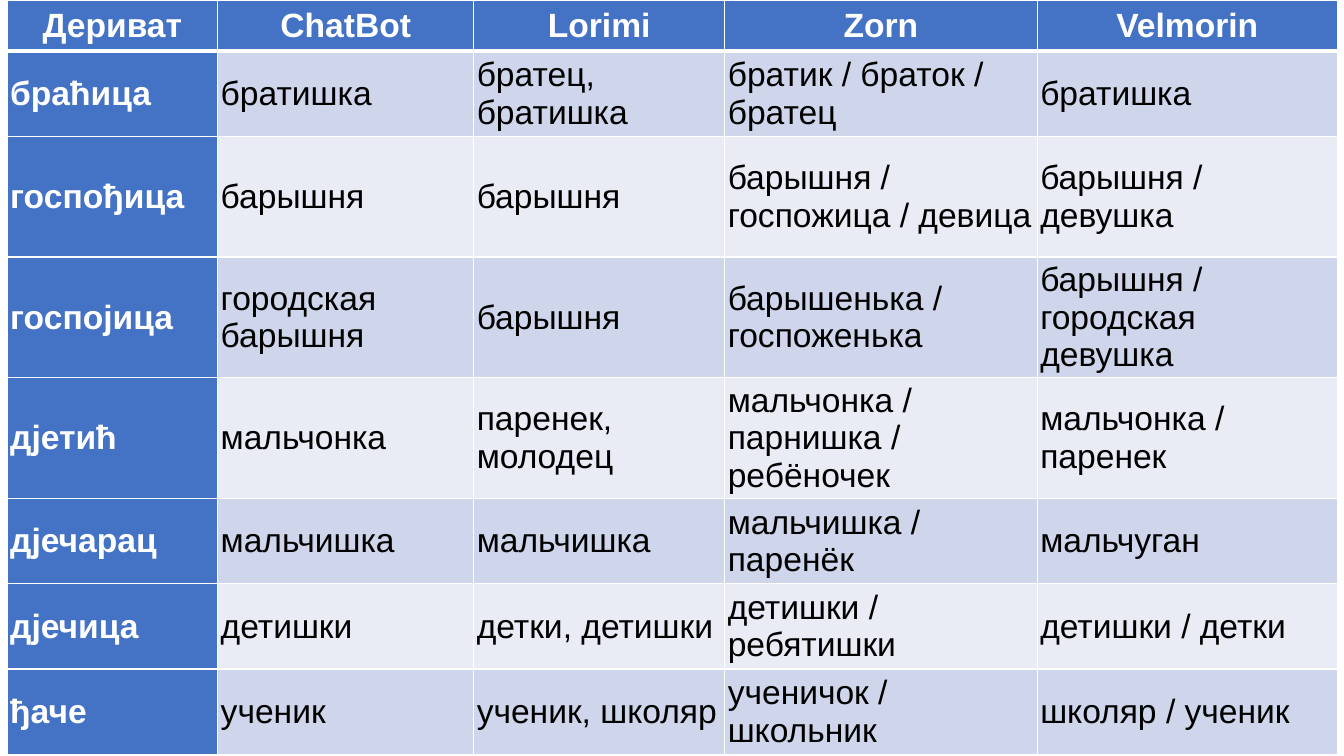
"""Build a slide with a table of derivatives and their translations."""
import dataclasses

import lxml.etree
import pptx
import pptx.dml.color
import pptx.enum.text
import pptx.oxml.ns
import pptx.util

Pt = pptx.util.Pt
TINTS = {"head": "4472C4", "odd": "CFD5EA", "even": "E9EBF5",
         "light": "FFFFFF", "dark": "000000"}
WIDTHS = (150.4, 182.9, 179.3, 223.2, 214.5)
TITLES = ("Дериват", "ChatBot", "Lorimi", "Zorn", "Velmorin")
HEIGHT = 36.5
LEFT = 5.1


@dataclasses.dataclass
class Entry:
    """One table row and its height."""
    texts: tuple[str, ...]
    height: float


ENTRIES = (
    Entry(TITLES, HEIGHT),
    Entry(("браћица", "братишка", "братец, братишка",
           "братик / браток / братец", "братишка"), 61),
    Entry(("госпођица", "барышня", "барышня",
           "барышня / госпожица / девица", "барышня / девушка"), 86.2),
    Entry(("госпојица", "городская барышня", "барышня",
           "барышенька / госпоженька", "барышня / городская девушка"), 86.2),
    Entry(("дјетић", "мальчонка", "паренек, молодец",
           "мальчонка / парнишка / ребёночек", "мальчонка / паренек"), 86.2),
    Entry(("дјечарац", "мальчишка", "мальчишка",
           "мальчишка / паренёк", "мальчуган"), 61),
    Entry(("дјечица", "детишки", "детки, детишки",
           "детишки / ребятишки", "детишки / детки"), 61),
    Entry(("ђаче", "ученик", "ученик, школяр",
           "ученичок / школьник", "школяр / ученик"), 61),
)


def tint(name: str) -> pptx.dml.color.RGBColor:
    """Return a named colour."""
    return pptx.dml.color.RGBColor.from_string(TINTS[name])


def edge(cell, row: int) -> None:
    """Draw white cell borders, thick between the header and the body."""
    qn = pptx.oxml.ns.qn
    props = cell._tc.get_or_add_tcPr()
    thick = {"T": row == 1, "B": row == 0}
    for spot, side in enumerate("LRTB"):
        line = lxml.etree.Element(qn(f"a:ln{side}"))
        line.set("w", str(Pt(3 if thick.get(side) else 1)))
        fill = lxml.etree.SubElement(line, qn("a:solidFill"))
        lxml.etree.SubElement(fill, qn("a:srgbClr")).set("val", TINTS["light"])
        props.insert(spot, line)


def write(cell, text: str, row: int, col: int) -> None:
    """Fill and label one cell."""
    head = row == 0 or col == 0
    band = "odd" if row % 2 else "even"
    cell.fill.solid()
    cell.fill.fore_color.rgb = tint("head" if head else band)
    edge(cell, row)
    cell.margin_left = cell.margin_right = Pt(2.2)
    cell.margin_top = cell.margin_bottom = Pt(1.4)
    cell.vertical_anchor = pptx.enum.text.MSO_ANCHOR.MIDDLE
    para = cell.text_frame.paragraphs[0]
    align = pptx.enum.text.PP_ALIGN
    para.alignment = align.LEFT if row else align.CENTER
    run = para.add_run()
    run.text = text
    run.font.name = "Arial"
    run.font.size = Pt(24)
    run.font.bold = head
    run.font.color.rgb = tint("light" if head else "dark")


def main() -> None:
    """Create and save the deck."""
    deck = pptx.Presentation()
    deck.slide_width, deck.slide_height = Pt(960), Pt(540)
    slide = deck.slides.add_slide(deck.slide_layouts[6])
    total = sum(entry.height for entry in ENTRIES)
    table = slide.shapes.add_table(
        len(ENTRIES), len(WIDTHS), Pt(LEFT), Pt(0),
        Pt(sum(WIDTHS)), Pt(total)).table
    table.first_col = True
    for col, width in enumerate(WIDTHS):
        table.columns[col].width = Pt(width)
    for row, entry in enumerate(ENTRIES):
        table.rows[row].height = Pt(entry.height)
        for col, text in enumerate(entry.texts):
            write(table.cell(row, col), text, row, col)
    deck.save("out.pptx")


if __name__ == "__main__":
    main()
